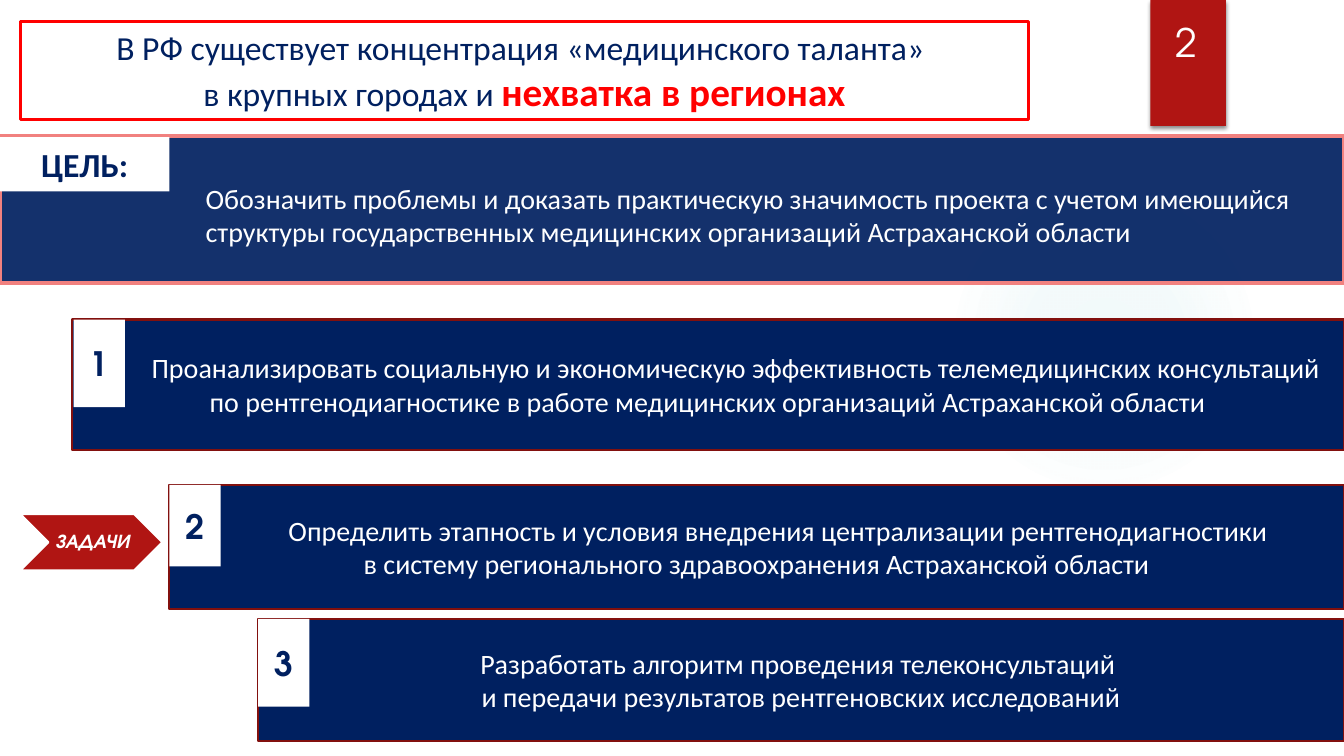
from lxml.etree import SubElement
from pptx import Presentation
from pptx.dml.color import RGBColor
from pptx.enum.shapes import MSO_SHAPE as Shape
from pptx.enum.text import MSO_ANCHOR as Anchor, MSO_AUTO_SIZE as AutoSize, PP_ALIGN as Align
from pptx.oxml.ns import qn
from pptx.util import Inches, Pt

WIDTH, HEIGHT = 13.33, 7.5
NAVY, RED, WHITE, CRIMSON = "002060", "FF0000", "FFFFFF", "B01513"
BODY, DISPLAY = "Calibri", "TeX Gyre Adventor"

# A line of text is a list of runs: (text, size, colour, bold)
TITLE = [
    [("В РФ существует концентрация «медицинского таланта» ", 24, NAVY, False)],
    [("в крупных городах и ", 24, NAVY, False), ("нехватка в регионах", 28, RED, True)],
]
GOAL_LABEL = "ЦЕЛЬ:"
GOAL = [
    "Обозначить проблемы и доказать практическую значимость проекта с учетом имеющийся",
    "структуры государственных медицинских организаций Астраханской области",
]
TASKS_LABEL = "ЗАДАЧИ"
SLIDE_NUMBER = "2"
# left, top, height, number left, number height, first-line indent, lines
TASKS = [
    (0.71, 3.17, 1.29, 0.73, 0.87, 0.56, [
        "Проанализировать социальную и экономическую эффективность телемедицинских консультаций",
        "по рентгенодиагностике в работе медицинских организаций Астраханской области"]),
    (1.68, 4.81, 1.23, 1.68, 0.81, 0.49, [
        "Определить этапность и условия внедрения централизации рентгенодиагностики ",
        "в систему регионального здравоохранения Астраханской области"]),
    (2.56, 6.14, 1.21, 2.56, 0.87, 0, [
        "Разработать алгоритм проведения телеконсультаций ",
        "и передачи результатов рентгеновских исследований"]),
]
NUMBER_WIDTH = 0.51
GLOW_STOPS = [(0, 7), (36, 6), (69, 0)]  # position and opacity, percent


def colour(value):
    return RGBColor.from_string(value)


def paint(shape, fill, line=None, line_width=1.5):
    shape.fill.solid()
    shape.fill.fore_color.rgb = colour(fill)
    if line:
        shape.line.color.rgb = colour(line)
        shape.line.width = Pt(line_width)
    else:
        shape.line.fill.background()


def add_box(slide, place, fill, line=None, line_width=1.5, kind=Shape.RECTANGLE):
    shape = slide.shapes.add_shape(kind, *map(Inches, place))
    shape.shadow.inherit = False
    paint(shape, fill, line, line_width)
    return shape


def write(shape, lines, font=BODY, align=Align.CENTER, anchor=Anchor.MIDDLE,
          indent=0, italic=False, spacing=1):
    frame = shape.text_frame
    frame.word_wrap = True
    frame.auto_size = AutoSize.NONE
    frame.vertical_anchor = anchor
    for index, runs in enumerate(lines):
        paragraph = frame.add_paragraph() if index else frame.paragraphs[0]
        paragraph.alignment = align
        paragraph.line_spacing = spacing
        paragraph.space_before = Pt(0)
        if indent and index == 0:
            properties = paragraph._p.get_or_add_pPr()
            properties.set("marL", "0")
            properties.set("indent", str(Inches(indent)))
        for text, size, ink, bold in runs:
            run = paragraph.add_run()
            run.text = text
            run.font.name = font
            run.font.size = Pt(size)
            run.font.bold = bold
            run.font.italic = italic
            run.font.color.rgb = colour(ink)


def set_margins(shape, left, top, right, bottom):
    frame = shape.text_frame
    frame.margin_left, frame.margin_top = Inches(left), Inches(top)
    frame.margin_right, frame.margin_bottom = Inches(right), Inches(bottom)


def add_alpha(parent, tag, value, percent):
    element = SubElement(parent, qn(tag), val=value)
    SubElement(element, qn("a:alpha"), val=str(percent * 1000))


def body_lines(lines):
    return [[(text, 20, WHITE, False)] for text in lines]


def add_glow(slide):
    glow = add_box(slide, (9.41, 1.83, 3.08, 3.08), WHITE, kind=Shape.OVAL)
    properties = glow._element.spPr
    solid = properties.find(qn("a:solidFill"))
    gradient = solid.makeelement(qn("a:gradFill"), {"rotWithShape": "1"})
    properties.replace(solid, gradient)
    stops = SubElement(gradient, qn("a:gsLst"))
    for position, opacity in GLOW_STOPS:
        stop = SubElement(stops, qn("a:gs"), pos=str(position * 1000))
        add_alpha(stop, "a:srgbClr", "50B9C1", opacity)
    circle = SubElement(gradient, qn("a:path"), path="circle")
    SubElement(circle, qn("a:fillToRect"), l="50000", t="50000", r="50000", b="50000")


def add_number_tag(slide):
    tag = add_box(slide, (11.41, 0, 0.75, 1.25), CRIMSON)
    effects = tag._element.spPr.find(qn("a:effectLst"))
    shadow = SubElement(effects, qn("a:outerShdw"), blurRad=str(Pt(3)), dist=str(Pt(2)),
                        dir="5400000", rotWithShape="0")
    add_alpha(shadow, "a:srgbClr", "000000", 45)
    number = slide.shapes.add_textbox(*map(Inches, (11.32, 0.09, 0.89, 0.61)))
    write(number, [[(SLIDE_NUMBER, 28, WHITE, False)]], DISPLAY, anchor=Anchor.BOTTOM)


def add_title(slide):
    title = slide.shapes.title
    title.left, title.top, title.width, title.height = map(Inches, (0.2, 0.21, 10, 0.98))
    paint(title, WHITE, RED, 2.25)
    write(title, TITLE)


def add_goal(slide):
    band = add_box(slide, (0, 1.35, WIDTH, 1.46), NAVY, "F1817F", 2.5)
    tint = band._element.spPr.find(qn("a:solidFill"))[0]
    SubElement(tint, qn("a:alpha"), val="92000")
    set_margins(band, 2.04, 0.15, 0.1, 0.05)
    write(band, body_lines(GOAL), align=Align.LEFT)
    label = add_box(slide, (0, 1.36, 1.68, 0.54), WHITE)
    write(label, [[(GOAL_LABEL, 24, NAVY, True)]])


def add_tasks(slide):
    add_box(slide, (0.2, 5.1, 1.41, 0.56), CRIMSON, WHITE, kind=Shape.CHEVRON)
    label = slide.shapes.add_textbox(*map(Inches, (0.48, 5.1, 0.85, 0.56)))
    set_margins(label, 0.02, 0.01, 0, 0.01)
    write(label, [[(TASKS_LABEL, 14, WHITE, True)]], DISPLAY, italic=True, spacing=0.9)
    for number, task in enumerate(TASKS, 1):
        left, top, height, number_left, number_height, indent, lines = task
        band = add_box(slide, (left, top, WIDTH - left, height), NAVY, "82100E")
        write(band, body_lines(lines), indent=indent)
        badge = add_box(slide, (number_left, top, NUMBER_WIDTH, number_height), WHITE)
        write(badge, [[(str(number), 24, NAVY, True)]], DISPLAY)


def main():
    presentation = Presentation()
    presentation.slide_width, presentation.slide_height = Inches(WIDTH), Inches(HEIGHT)
    slide = presentation.slides.add_slide(presentation.slide_layouts[5])
    add_glow(slide)
    add_number_tag(slide)
    add_title(slide)
    add_goal(slide)
    add_tasks(slide)
    presentation.save("out.pptx")


if __name__ == "__main__":
    main()
